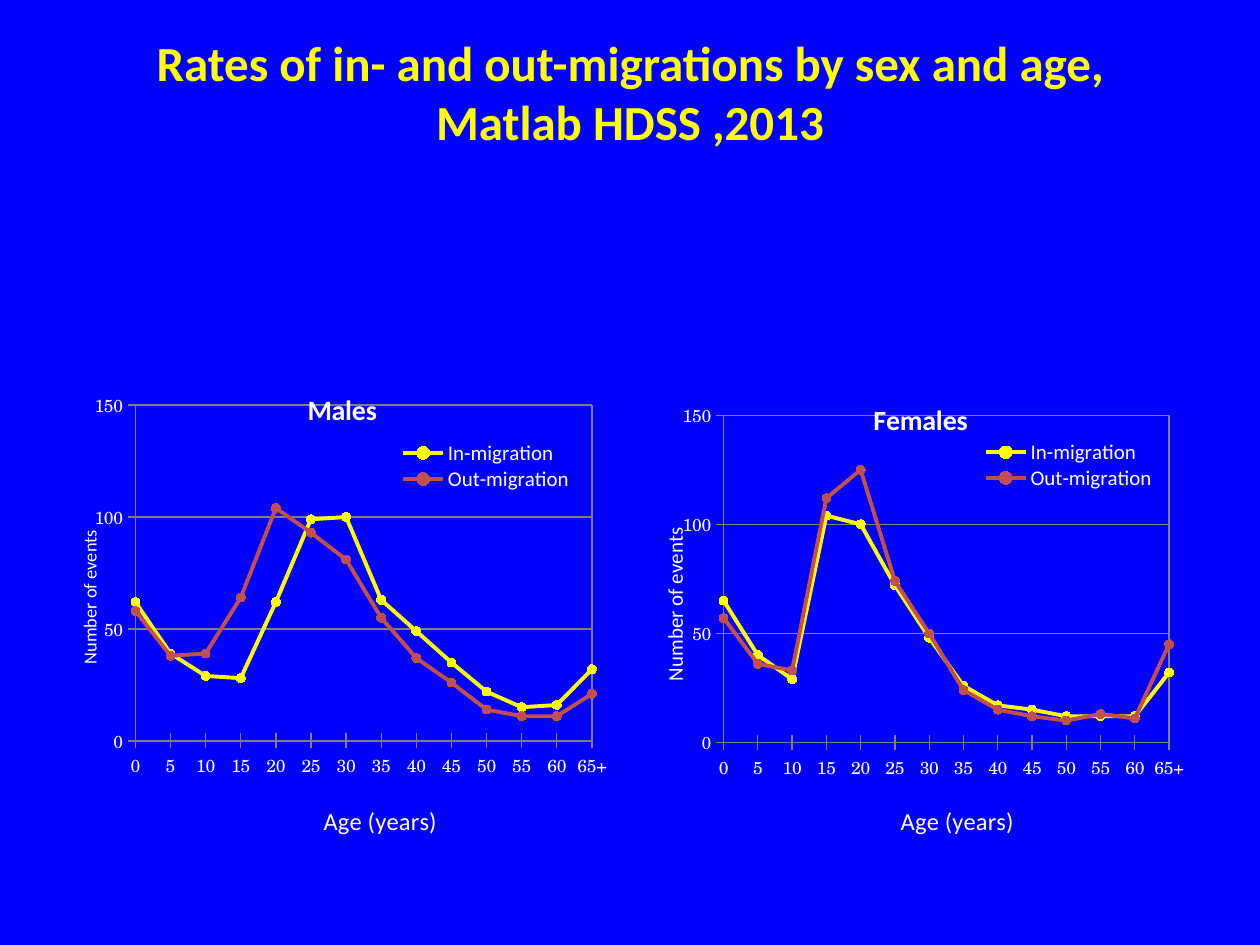
from lxml.etree import fromstring
from pptx import Presentation
from pptx.chart.data import CategoryChartData
from pptx.dml.color import RGBColor
from pptx.enum.chart import XL_CHART_TYPE, XL_LEGEND_POSITION, XL_MARKER_STYLE, XL_TICK_MARK
from pptx.enum.text import MSO_ANCHOR, PP_ALIGN
from pptx.oxml.ns import nsdecls, qn
from pptx.util import Pt

# Content
TITLE = "Rates of in- and out-migrations by sex and age,\vMatlab HDSS ,2013"
AGES = [str(age) for age in range(0, 65, 5)] + ["65+"]
AGE_TITLE, EVENTS_TITLE = "Age (years)", "Number of events"
SERIES_COLORS = {"In-migration": "yellow", "Out-migration": "red"}

# Layouts are fractions of the chart: x, y and, where needed, width, height
PANELS = [
    {
        "title": "Males", "left": 36, "top": 203.76, "events_size": 10.5,
        "values": [
            [62, 39, 29, 28, 62, 99, 100, 63, 49, 35, 22, 15, 16, 32],
            [58, 38, 39, 64, 104, 93, 81, 55, 37, 26, 14, 11, 11, 21],
        ],
        "plot": (0.13, 0.1, 0.82, 0.69), "legend": (0.6, 0.17, 0.32, 0.11),
        "title_at": (0.43, 0.06), "age_at": (0.46, 0.91), "events_at": (0.02, 0.35),
    },
    {
        "title": "Females", "left": 365.76, "top": 210.24, "events_size": 12,
        "values": [
            [65, 40, 29, 104, 100, 72, 48, 26, 17, 15, 12, 12, 12, 32],
            [57, 36, 33, 112, 125, 74, 50, 24, 15, 12, 10, 13, 11, 45],
        ],
        "plot": (0.15, 0.1, 0.8, 0.69), "legend": (0.61, 0.15, 0.32, 0.11),
        "title_at": (0.41, 0.06), "age_at": (0.46, 0.91), "events_at": (0.03, 0.33),
    },
]
CHART_WIDTH, CHART_BOTTOM = 318.24, 482.4

THEME = {
    "background": "0000FF", "yellow": "FFFF00", "red": "C0504D",
    "white": "FFFFFF", "grid": "808080",
    "text_font": "Calibri", "tick_font": "TeX Gyre Schola",
    "title": 28, "panel": 16, "age": 14, "legend": 12, "tick": 10,
    "series_line": 2.25, "thin_line": 0.75,
}


def color(name):
    return RGBColor.from_string(THEME[name])


def set_font(font, size, name="text_font", fill="white", bold=False):
    formats = {"name": THEME[name], "size": Pt(size), "bold": bold}
    for attribute, value in formats.items():
        setattr(font, attribute, value)
    font.color.rgb = color(fill)


def set_line(line, fill, width):
    line.color.rgb = color(fill)
    line.width = Pt(THEME[width])


def place(element, position, inner=False):
    """Give a chart part a manual layout."""
    for old in element.findall(qn("c:layout")):
        element.remove(old)
    target = '<c:layoutTarget val="inner"/>' if inner else ""
    modes = '<c:xMode val="edge"/><c:yMode val="edge"/>'
    sizes = "".join(f'<c:{key} val="{value}"/>' for key, value in zip("xywh", position))
    layout = fromstring(f'<c:layout {nsdecls("c")}><c:manualLayout>{target}{modes}{sizes}'
                        "</c:manualLayout></c:layout>")
    element.insert(0 if inner else 1, layout)


def unfilled(outline):
    return fromstring(f'<c:spPr {nsdecls("c", "a")}><a:noFill/><a:ln w="9525">{outline}</a:ln></c:spPr>')


def add_title(owner, title, text, size, position, bold=False):
    owner.has_title = True
    title = title()
    title.text_frame.text = text
    set_font(title.text_frame.paragraphs[0].runs[0].font, size, bold=bold)
    place(title._element, position)


def format_axis(axis):
    axis.major_tick_mark = XL_TICK_MARK.CROSS
    axis.minor_tick_mark = XL_TICK_MARK.NONE
    set_font(axis.tick_labels.font, THEME["tick"], "tick_font")
    set_line(axis.format.line, "grid", "thin_line")


def add_panel(slide, panel):
    data = CategoryChartData(number_format="0")
    data.categories = AGES
    for name, values in zip(SERIES_COLORS, panel["values"]):
        data.add_series(name, values)
    chart = slide.shapes.add_chart(
        XL_CHART_TYPE.LINE_MARKERS, Pt(panel["left"]), Pt(panel["top"]),
        Pt(CHART_WIDTH), Pt(CHART_BOTTOM - panel["top"]), data).chart
    chart.font.name = THEME["tick_font"]
    add_title(chart, lambda: chart.chart_title, panel["title"], THEME["panel"],
              panel["title_at"], bold=True)

    # Axes
    ages, events = chart.category_axis, chart.value_axis
    for axis, text, size, position in (
            (ages, AGE_TITLE, THEME["age"], panel["age_at"]),
            (events, EVENTS_TITLE, panel["events_size"], panel["events_at"])):
        format_axis(axis)
        add_title(axis, lambda: axis.axis_title, text, size, position)
    scale = {"minimum_scale": 0, "maximum_scale": 150, "major_unit": 50,
             "has_major_gridlines": True}
    for attribute, value in scale.items():
        setattr(events, attribute, value)
    events.tick_labels.number_format = "0"
    events.tick_labels.number_format_is_linked = False
    set_line(events.major_gridlines.format.line, "grid", "thin_line")

    # Lines start on the value axis
    axis_xml = events._element
    for old in axis_xml.findall(qn("c:crossBetween")):
        axis_xml.remove(old)
    axis_xml.find(qn("c:crosses")).addnext(
        fromstring(f'<c:crossBetween {nsdecls("c")} val="midCat"/>'))

    # Series
    plot = chart.plots[0]
    plot.vary_by_categories = False
    for series, fill in zip(plot.series, SERIES_COLORS.values()):
        series.smooth = False
        set_line(series.format.line, fill, "series_line")
        marker = series.marker
        marker.style, marker.size = XL_MARKER_STYLE.CIRCLE, 5
        marker.format.fill.solid()
        marker.format.fill.fore_color.rgb = color(fill)
        set_line(marker.format.line, fill, "thin_line")

    # Legend
    chart.has_legend = True
    legend = chart.legend
    legend.position = XL_LEGEND_POSITION.RIGHT
    legend.include_in_layout = False
    set_font(legend.font, THEME["legend"])
    place(legend._element, panel["legend"])

    # Plot frame and clear background
    chart_xml = chart._chartSpace.find(qn("c:chart"))
    plot_area = chart_xml.find(qn("c:plotArea"))
    place(plot_area, panel["plot"], inner=True)
    plot_area.append(unfilled(
        f'<a:solidFill><a:srgbClr val="{THEME["grid"]}"/></a:solidFill>'))
    chart_xml.addnext(unfilled("<a:noFill/>"))


def add_heading(slide):
    frame = slide.shapes.add_textbox(Pt(36), Pt(21.6), Pt(648), Pt(90)).text_frame
    formats = {"word_wrap": True, "vertical_anchor": MSO_ANCHOR.MIDDLE,
               "margin_top": Pt(0), "margin_bottom": Pt(29)}
    for attribute, value in formats.items():
        setattr(frame, attribute, value)
    paragraph = frame.paragraphs[0]
    paragraph.text = TITLE
    paragraph.alignment = PP_ALIGN.CENTER
    for run in paragraph.runs:
        set_font(run.font, THEME["title"], fill="yellow", bold=True)


def main():
    presentation = Presentation()
    presentation.slide_width, presentation.slide_height = Pt(720), Pt(540)
    slide = presentation.slides.add_slide(presentation.slide_layouts[6])
    slide.background.fill.solid()
    slide.background.fill.fore_color.rgb = color("background")
    add_heading(slide)
    for panel in PANELS:
        add_panel(slide, panel)
    presentation.save("out.pptx")


if __name__ == "__main__":
    main()
